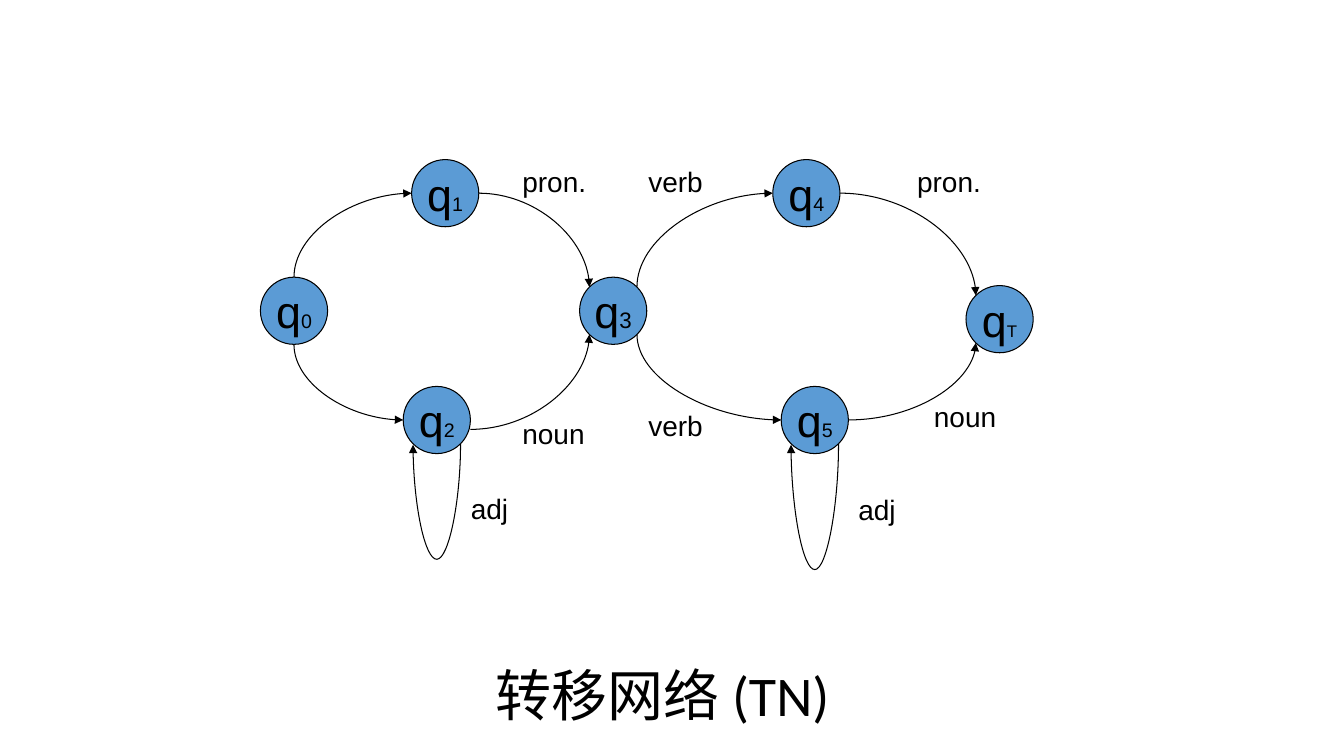
from lxml import etree
from pptx import Presentation
from pptx.dml.color import RGBColor
from pptx.enum.dml import MSO_FILL
from pptx.enum.shapes import MSO_CONNECTOR, MSO_SHAPE
from pptx.enum.text import MSO_ANCHOR, MSO_AUTO_SIZE, PP_ALIGN
from pptx.oxml.ns import qn
from pptx.util import Pt

PX = 9525
CURVE, OVAL = MSO_CONNECTOR.CURVE, MSO_SHAPE.OVAL
LEFT, CENTER = PP_ALIGN.LEFT, PP_ALIGN.CENTER
MIDDLE = MSO_ANCHOR.MIDDLE
FIT_SHAPE = MSO_AUTO_SIZE.SHAPE_TO_FIT_TEXT

SLIDE_SIZE = (1280, 720)
NODE_SIZE = 64
LABEL_HEIGHT = 41

THEME = {
    "ink": RGBColor(0x00, 0x00, 0x00),
    "node": RGBColor(0x5B, 0x9B, 0xD5),
    "font": "Arial",
    "title_fonts": ("Lato", "Calibri"),
    "title": 40,
    "state": 32,
    "label": 20,
    "line": 0.75,
}

TITLE = (("转移网络 ", "(TN)"), (456, 624, 350, 74))

# state: left, top, index size in points
NODES = {
    "0": (248, 264, 14),
    "1": (392, 152, 14),
    "2": (384, 368, 14),
    "3": (552, 264, 16),
    "4": (736, 152, 14),
    "5": (744, 368, 14),
    "T": (920, 272, 12),
}

# from state, side, to state, side, shift of the start downwards
EDGES = [
    ("0", "top", "1", "left", 0),
    ("0", "bottom", "2", "left", 0),
    ("1", "right", "3", "top left", 0),
    ("2", "right", "3", "bottom left", 9),
    ("3", "top right", "4", "left", 0),
    ("3", "bottom right", "5", "left", 0),
    ("4", "right", "T", "top left", 0),
    ("5", "right", "T", "bottom left", 0),
]

# state, depth of the loop below it
LOOPS = [("2", 112), ("5", 122)]

# text, left, top, width
LABELS = [
    ("pron.", 488, 152, 80),
    ("noun", 488, 392, 80),
    ("adj", 439, 463, 74),
    ("verb", 608, 152, 98),
    ("verb", 608, 384, 98),
    ("pron.", 864, 152, 96),
    ("noun", 880, 376, 88),
    ("adj", 808, 464, 74),
]


def px(*lengths):
    return [round(length * PX) for length in lengths]


def set_attributes(target, values):
    for name, value in values.items():
        setattr(target, name, value)


def write(frame, runs, align):
    """Fill the first paragraph with (text, size, font) runs."""
    paragraph = frame.paragraphs[0]
    paragraph.alignment = align
    for text, size, font in runs:
        run = paragraph.add_run()
        run.text = text
        set_attributes(run.font, {"size": Pt(size), "name": font})
        run.font.color.rgb = THEME["ink"]


def add_text(slide, box, runs, align):
    frame = slide.shapes.add_textbox(*px(*box)).text_frame
    set_attributes(frame, {"word_wrap": True, "auto_size": FIT_SHAPE})
    write(frame, runs, align)


def style_line(line):
    line.width = Pt(THEME["line"])
    line.color.rgb = THEME["ink"]


def add_node(slide, name):
    left, top, index_size = NODES[name]
    shape = slide.shapes.add_shape(OVAL, *px(left, top, NODE_SIZE, NODE_SIZE))
    shape.shadow.inherit = False
    shape.fill.solid()
    shape.fill.fore_color.rgb = THEME["node"]
    style_line(shape.line)
    set_attributes(shape.text_frame, {"word_wrap": False, "vertical_anchor": MIDDLE})
    font = THEME["font"]
    write(shape.text_frame, [("q", THEME["state"], font), (name, index_size, font)], CENTER)


def site(name, side):
    """Point on a state's circle; two words in side mean a diagonal."""
    words = side.split()
    reach = NODE_SIZE / 2 / len(words) ** 0.5
    x = NODES[name][0] + NODE_SIZE / 2 + reach * (("right" in words) - ("left" in words))
    y = NODES[name][1] + NODE_SIZE / 2 + reach * (("bottom" in words) - ("top" in words))
    return x, y


def add_curve(slide, start, end, preset, rotation=0, adjust=None):
    """Draw a curved arrow whose ends are exact after the rotation."""
    center_x, center_y = (start[0] + end[0]) / 2, (start[1] + end[1]) / 2
    cosine, sine = {0: (1, 0), 90: (0, -1), 270: (0, 1)}[rotation]
    ends = []
    for x, y in (start, end):
        dx, dy = x - center_x, y - center_y
        ends += [center_x + cosine * dx - sine * dy, center_y + sine * dx + cosine * dy]
    connector = slide.shapes.add_connector(CURVE, *px(*ends))
    style_line(connector.line)
    properties = connector._element.spPr
    if rotation:
        properties.find(qn("a:xfrm")).set("rot", str(rotation * 60000))
    geometry = properties.find(qn("a:prstGeom"))
    geometry.set("prst", preset)
    if adjust is not None:
        guide = etree.SubElement(geometry.find(qn("a:avLst")), qn("a:gd"))
        guide.set("name", "adj1")
        guide.set("fmla", f"val {adjust}")
    etree.SubElement(properties.find(qn("a:ln")), qn("a:tailEnd")).set("type", "triangle")
    etree.SubElement(properties, qn("a:effectLst"))


def add_edge(slide, source, source_side, target, target_side, shift):
    x, y = site(source, source_side)
    rotation = 0 if source_side == "right" else 270
    add_curve(slide, (x, y + shift), site(target, target_side), "curvedConnector2", rotation)


def add_loop(slide, name, depth):
    start = site(name, "bottom right")
    x, y = site(name, "bottom left")
    add_curve(slide, start, (x, y + 1), "curvedConnector3", 90, depth * 100000)


def main():
    presentation = Presentation()
    width, height = px(*SLIDE_SIZE)
    set_attributes(presentation, {"slide_width": width, "slide_height": height})
    slide = presentation.slides.add_slide(presentation.slide_layouts[6])

    texts, box = TITLE
    runs = [(text, THEME["title"], font) for text, font in zip(texts, THEME["title_fonts"])]
    add_text(slide, box, runs, CENTER)
    for edge in EDGES:
        add_edge(slide, *edge)
    for loop in LOOPS:
        add_loop(slide, *loop)
    for name in NODES:
        add_node(slide, name)
    for text, left, top, label_width in LABELS:
        runs = [(text, THEME["label"], THEME["font"])]
        add_text(slide, (left, top, label_width, LABEL_HEIGHT), runs, LEFT)
    presentation.save("out.pptx")


if __name__ == "__main__":
    main()
